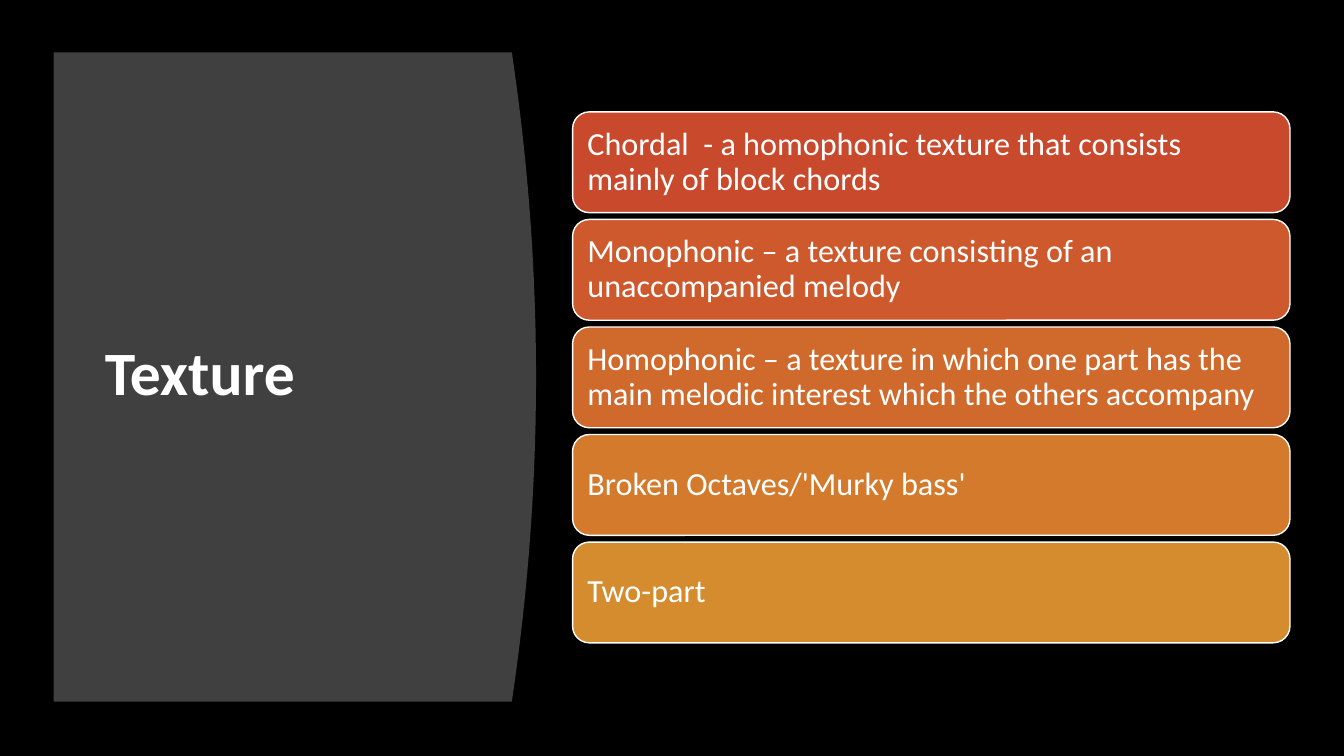
from dataclasses import dataclass

import pptx
import pptx.dml.color
import pptx.enum.shapes
import pptx.enum.text
import pptx.shapes.autoshape
import pptx.slide
import pptx.text.text
import pptx.util

Cm = pptx.util.Cm
RGBColor = pptx.dml.color.RGBColor

BLACK = RGBColor(0x00, 0x00, 0x00)
WHITE = RGBColor(0xFF, 0xFF, 0xFF)
PANEL_GREY = RGBColor(0x40, 0x40, 0x40)
RED = RGBColor(0xC9, 0x49, 0x2C)
VERMILION = RGBColor(0xCD, 0x59, 0x2C)
RUST = RGBColor(0xD0, 0x69, 0x2C)
ORANGE = RGBColor(0xD4, 0x7A, 0x2C)
AMBER = RGBColor(0xD5, 0x8C, 0x2E)

BAR_TOP = 2.82
BAR_PITCH = 2.71
CURVE_STEPS = 40


@dataclass(frozen=True)
class TextureBar:
    text: str
    color: RGBColor


TEXTURE_BARS = [
    TextureBar("Chordal  - a homophonic texture that consists mainly of block chords", RED),
    TextureBar("Monophonic – a texture consisting of an unaccompanied melody", VERMILION),
    TextureBar(
        "Homophonic – a texture in which one part has the main melodic interest "
        "which the others accompany",
        RUST,
    ),
    TextureBar("Broken Octaves/'Murky bass'", ORANGE),
    TextureBar("Two-part ", AMBER),
]


def apply_format(target: object, values: dict[str, object]) -> None:
    for name, value in values.items():
        setattr(target, name, value)


def write_text(
    text_frame: pptx.text.text.TextFrame, text: str, size: float, bold: bool
) -> None:
    text_frame.text = text
    apply_format(text_frame, {
        "word_wrap": True,
        "auto_size": pptx.enum.text.MSO_AUTO_SIZE.NONE,
        "vertical_anchor": pptx.enum.text.MSO_ANCHOR.MIDDLE,
        "margin_left": Cm(0.25),
        "margin_right": Cm(0.25),
    })
    paragraph = text_frame.paragraphs[0]
    apply_format(paragraph, {
        "alignment": pptx.enum.text.PP_ALIGN.LEFT,
        "line_spacing": 0.9,
    })
    font = paragraph.runs[0].font
    apply_format(font, {"name": "Calibri", "size": pptx.util.Pt(size), "bold": bold})
    font.color.rgb = WHITE


def fill_shape(shape: pptx.shapes.autoshape.Shape, color: RGBColor) -> None:
    shape.shadow.inherit = False
    shape.fill.solid()
    shape.fill.fore_color.rgb = color


def add_panel(slide: pptx.slide.Slide) -> pptx.shapes.autoshape.Shape:
    """Draw the grey panel, whose right edge is a shallow parabola."""
    left, top, shoulder, bulge, height = 1.35, 1.32, 12.9, 0.61, 16.36
    steps = [step / CURVE_STEPS for step in range(CURVE_STEPS + 1)]
    edge = [
        (Cm(shoulder + 4 * bulge * step * (1 - step)), Cm(top + height * step))
        for step in steps
    ]
    builder = slide.shapes.build_freeform(Cm(left), Cm(top))
    builder.add_line_segments([*edge, (Cm(left), Cm(top + height))], close=True)
    panel = builder.convert_to_shape()
    fill_shape(panel, PANEL_GREY)
    panel.line.fill.background()
    return panel


def add_title(slide: pptx.slide.Slide) -> None:
    title = slide.shapes.title
    apply_format(title, {
        "left": Cm(2.39), "top": Cm(2.82), "width": Cm(9.5), "height": Cm(13.31),
    })
    write_text(title.text_frame, "Texture", 44, True)
    title.element.addprevious(add_panel(slide).element)


def add_texture_bars(slide: pptx.slide.Slide) -> None:
    group = slide.shapes.add_group_shape()
    for index, bar in enumerate(TEXTURE_BARS):
        shape = group.shapes.add_shape(
            pptx.enum.shapes.MSO_SHAPE.ROUNDED_RECTANGLE,
            Cm(14.43), Cm(BAR_TOP + index * BAR_PITCH), Cm(18.08), Cm(2.54),
        )
        fill_shape(shape, bar.color)
        shape.line.color.rgb = WHITE
        shape.line.width = pptx.util.Pt(1)
        write_text(shape.text_frame, bar.text, 23, False)


def main() -> None:
    presentation = pptx.Presentation()
    apply_format(presentation, {"slide_width": Cm(33.87), "slide_height": Cm(19.05)})
    slide = presentation.slides.add_slide(
        presentation.slide_layouts.get_by_name("Title Only")
    )
    slide.background.fill.solid()
    slide.background.fill.fore_color.rgb = BLACK
    add_title(slide)
    add_texture_bars(slide)
    presentation.save("out.pptx")


if __name__ == "__main__":
    main()
